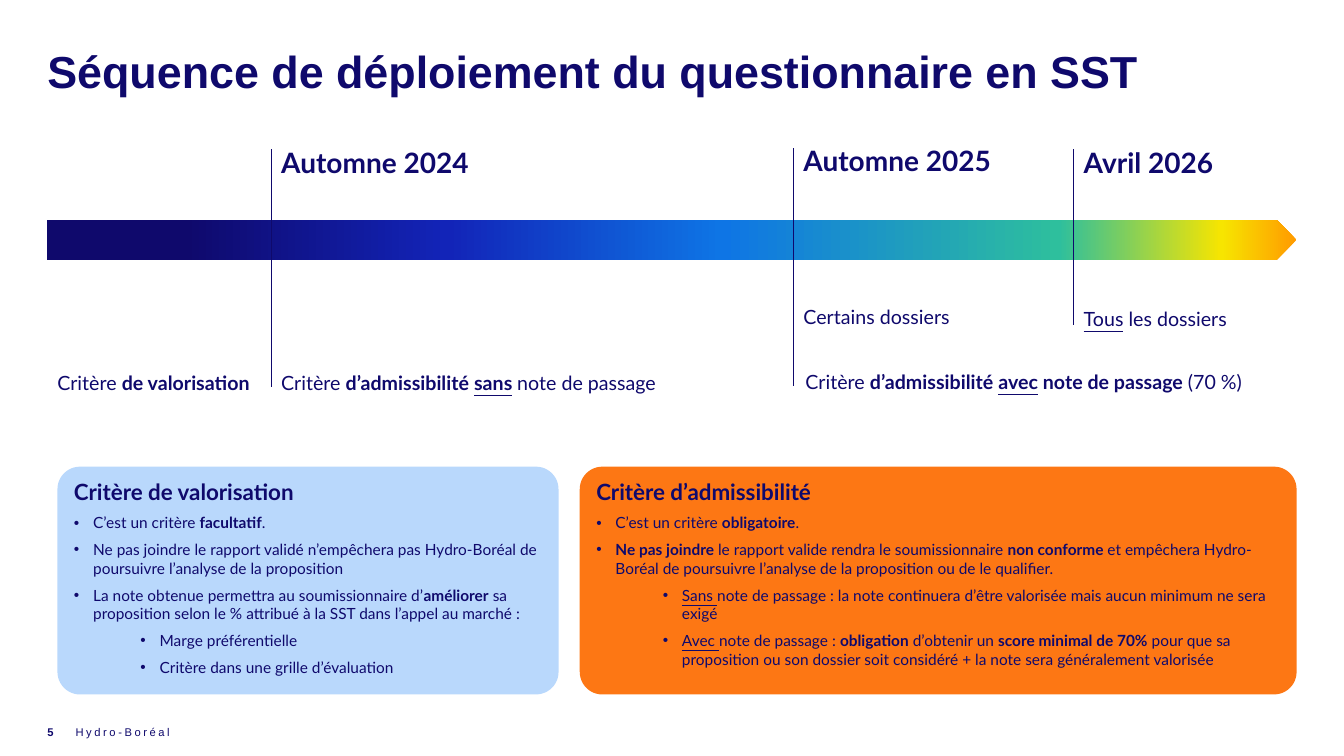
from dataclasses import dataclass

from lxml.etree import SubElement
from pptx import Presentation
from pptx.dml.color import RGBColor
from pptx.enum.shapes import MSO_CONNECTOR, MSO_SHAPE
from pptx.enum.text import MSO_ANCHOR, PP_ALIGN
from pptx.oxml.ns import qn
from pptx.util import Inches, Pt

NAVY = "0F096C"
BULLET_HANG = 0.19


@dataclass
class Run:
    text: str
    bold: bool = False
    underline: bool = False


@dataclass
class Label:
    left: float
    top: float
    width: float
    height: float
    runs: list[Run]
    size: float = 14
    font: str = "Lato"
    margin: float = 0.1
    anchor: MSO_ANCHOR = MSO_ANCHOR.TOP
    line_spacing: float | None = None
    tracking: float = 0


@dataclass
class Milestone:
    x: float
    top: float
    bottom: float


@dataclass
class Bullet:
    runs: list[Run]
    level: int = 0


@dataclass
class Card:
    left: float
    width: float
    color: str
    heading: str
    bullets: list[Bullet]


def rgb(color: str) -> RGBColor:
    return RGBColor.from_string(color)


def set_values(target, values: dict) -> None:
    for name, value in values.items():
        setattr(target, name, value)


def add_runs(paragraph, runs: list[Run], size: float, font: str = "Lato", tracking: float = 0) -> None:
    for part in runs:
        run = paragraph.add_run()
        run.text = part.text
        set_values(run.font, {"name": font, "size": Pt(size), "bold": part.bold, "underline": part.underline})
        run.font.color.rgb = rgb(NAVY)
        if tracking:
            run.font._element.set("spc", str(round(tracking * 100)))


def add_label(slide, label: Label) -> None:
    box = slide.shapes.add_textbox(*map(Inches, (label.left, label.top, label.width, label.height)))
    set_values(box.text_frame, {
        "word_wrap": True, "vertical_anchor": label.anchor,
        "margin_left": Inches(label.margin), "margin_right": Inches(label.margin),
        "margin_top": 0, "margin_bottom": 0,
    })
    paragraph = box.text_frame.paragraphs[0]
    paragraph.line_spacing = label.line_spacing
    add_runs(paragraph, label.runs, label.size, label.font, label.tracking)


def add_time_arrow(slide) -> None:
    arrow = slide.shapes.add_shape(MSO_SHAPE.RIGHT_ARROW, *map(Inches, (0.47, 2.18, 12.39, 0.4)))
    arrow.shadow.inherit = False
    arrow.adjustments[0], arrow.adjustments[1] = 1, 0.5
    arrow.line.fill.background()
    arrow.fill.gradient()
    arrow.fill.gradient_angle = 180
    stops = arrow._element.spPr.find(qn("a:gradFill")).find(qn("a:gsLst"))
    for stop in list(stops):
        stops.remove(stop)
    for percent, color in GRADIENT:
        stop = SubElement(stops, qn("a:gs"), pos=str(percent * 1000))
        SubElement(stop, qn("a:srgbClr"), val=color)


def add_milestone(slide, mark: Milestone) -> None:
    x = Inches(mark.x)
    line = slide.shapes.add_connector(MSO_CONNECTOR.STRAIGHT, x, Inches(mark.top), x, Inches(mark.bottom))
    line.line.color.rgb = rgb(NAVY)
    line.line.width = Pt(0.5)
    SubElement(line._element.spPr, qn("a:effectLst"))


def add_card(slide, card: Card) -> None:
    panel = slide.shapes.add_shape(
        MSO_SHAPE.ROUNDED_RECTANGLE, *map(Inches, (card.left, 4.63, card.width, 2.26)))
    panel.shadow.inherit = False
    panel.adjustments[0] = 0.099
    panel.fill.solid()
    panel.fill.fore_color.rgb = rgb(card.color)
    panel.line.fill.background()
    frame = panel.text_frame
    set_values(frame, {"word_wrap": True, "vertical_anchor": MSO_ANCHOR.TOP})
    heading = frame.paragraphs[0]
    heading.alignment = PP_ALIGN.LEFT
    add_runs(heading, [Run(card.heading, bold=True)], 16)
    for bullet in card.bullets:
        paragraph = frame.add_paragraph()
        properties = paragraph._p.get_or_add_pPr()
        indent = 0.85 if bullet.level else BULLET_HANG
        properties.set("marL", str(Inches(indent)))
        properties.set("indent", str(-Inches(BULLET_HANG)))
        SubElement(properties, qn("a:buFont"), typeface="Arial")
        SubElement(properties, qn("a:buChar"), char="•")
        set_values(paragraph, {"level": bullet.level, "alignment": PP_ALIGN.LEFT, "space_before": Pt(6)})
        add_runs(paragraph, bullet.runs, 11)


GRADIENT = [(0, "FF9B00"), (6, "F7E500"), (19, "2EBF9D"), (46, "0E75E5"), (68, "1224B8"), (89, NAVY)]

MILESTONES = [Milestone(2.69, 1.48, 3.84), Milestone(7.87, 1.47, 3.83), Milestone(10.65, 1.48, 3.22)]

LABELS = [
    # Title and footer
    Label(0.47, 0.49, 12.39, 0.55, [Run("Séquence de déploiement du questionnaire en SST", True)],
          32, "Arial", 0, line_spacing=0.9),
    Label(0.47, 7.14, 0.28, 0.24, [Run("5", True)], 8, "Arial", 0, MSO_ANCHOR.MIDDLE),
    Label(0.75, 7.14, 9.45, 0.24, [Run("Hydro-Boréal")], 8, "Arial", 0, MSO_ANCHOR.MIDDLE, tracking=1.8),
    # Dates
    Label(2.69, 1.44, 2.24, 0.61, [Run("Automne 2024", True)], 20),
    Label(7.87, 1.42, 2.24, 0.61, [Run("Automne 2025", True)], 20),
    Label(10.65, 1.44, 1.98, 0.4, [Run("Avril 2026", True)], 20),
    # Scope
    Label(7.87, 3.03, 1.98, 0.36, [Run("Certains dossiers")]),
    Label(10.65, 3.04, 1.98, 0.36, [Run("Tous", underline=True), Run(" les dossiers")]),
    # Criteria
    Label(0.47, 3.68, 2.86, 0.16, [Run("Critère "), Run("de valorisation", True)]),
    Label(2.69, 3.68, 4.18, 0.29, [Run("Critère "), Run("d’admissibilité ", True), Run("sans", True, True),
                                   Run(" ", True), Run("note de passage")]),
    Label(7.89, 3.67, 5.04, 0.36, [Run("Critère "), Run("d’admissibilité ", True), Run("avec", True, True),
                                   Run(" note de passage ", True), Run("(70 %)")]),
]

CARDS = [
    Card(0.57, 4.97, "B9D8FC", "Critère de valorisation", [
        Bullet([Run("C’est un critère "), Run("facultatif", True), Run(".")]),
        Bullet([Run("Ne pas joindre le rapport validé n’empêchera pas Hydro-Boréal "
                    "de poursuivre l’analyse de la proposition")]),
        Bullet([Run("La note obtenue permettra au soumissionnaire d’"), Run("améliorer", True),
                Run(" sa proposition selon le % attribué à la SST dans l’appel au marché :")]),
        Bullet([Run("Marge préférentielle")], 1),
        Bullet([Run("Critère dans une grille d’évaluation")], 1),
    ]),
    Card(5.75, 7.11, "FD7714", "Critère d’admissibilité", [
        Bullet([Run("C’est un critère "), Run("obligatoire", True), Run(".")]),
        Bullet([Run("Ne pas joindre ", True), Run("le rapport valide rendra le soumissionnaire "),
                Run("non conforme ", True),
                Run("et empêchera Hydro-Boréal de poursuivre l’analyse de la proposition ou de le qualifier.")]),
        Bullet([Run("Sans ", underline=True),
                Run("note de passage : la note continuera d’être valorisée mais aucun minimum ne sera exigé")], 1),
        Bullet([Run("Avec ", underline=True), Run("note de passage : "), Run("obligation", True),
                Run(" d’obtenir un "), Run("score minimal de 70% ", True),
                Run("pour que sa proposition ou son dossier soit considéré "
                    "+ la note sera généralement valorisée")], 1),
    ]),
]


def main() -> None:
    deck = Presentation()
    set_values(deck, {"slide_width": Inches(13.33), "slide_height": Inches(7.5)})
    slide = deck.slides.add_slide(deck.slide_layouts[6])
    add_time_arrow(slide)
    for mark in MILESTONES:
        add_milestone(slide, mark)
    for label in LABELS:
        add_label(slide, label)
    for card in CARDS:
        add_card(slide, card)
    deck.save("out.pptx")


if __name__ == "__main__":
    main()
